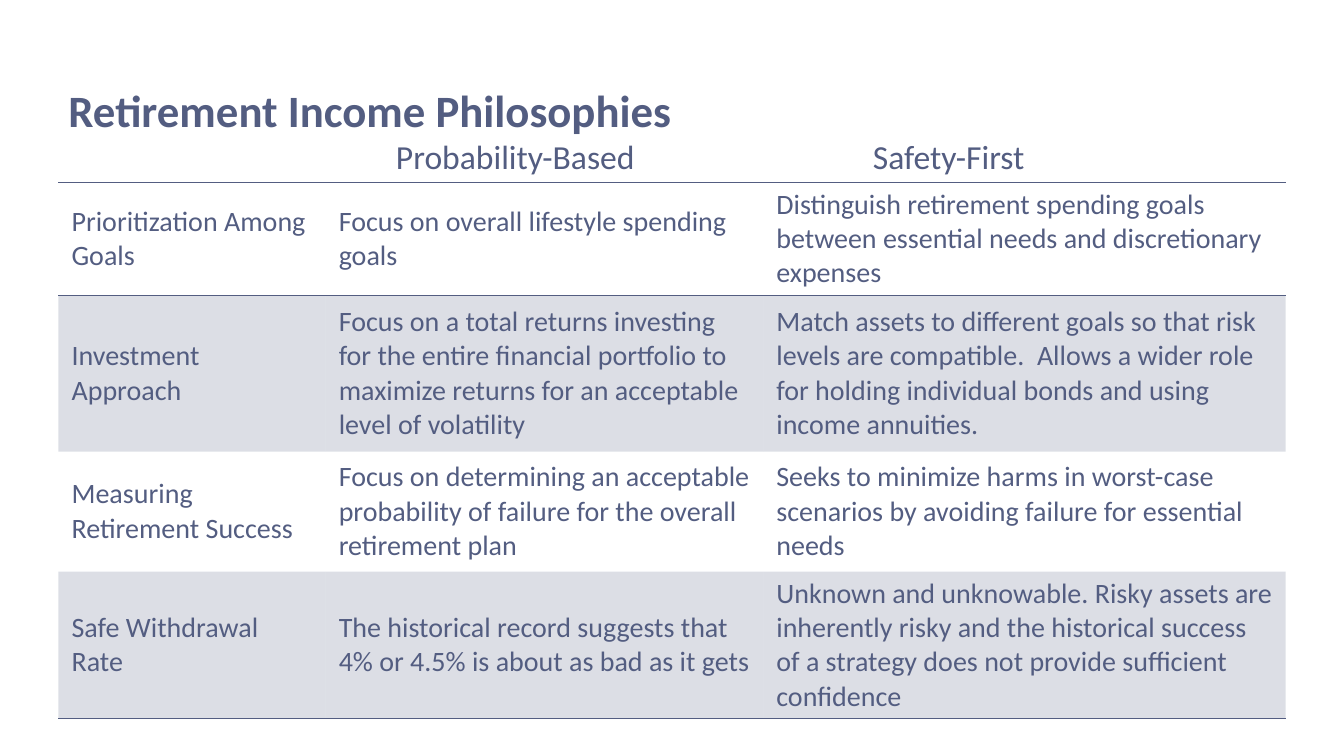
from dataclasses import dataclass

from lxml.etree import SubElement
from pptx import Presentation
from pptx.dml.color import RGBColor
from pptx.enum.text import MSO_ANCHOR as Anchor
from pptx.oxml import parse_xml
from pptx.oxml.ns import nsdecls, qn
from pptx.util import Inches, Pt


@dataclass(frozen=True)
class Theme:
    """Colours, font and type sizes of the slide."""
    ink: str = "535D81"
    font: str = "Calibri"
    title: int = 32
    heading: int = 24
    body: int = 20
    band_alpha: int = 20
    rule: int = 1


THEME = Theme()
SLIDE_W, SLIDE_H = Inches(13.33), Inches(7.5)
LEFT, WIDTH = 4.35, 91.3
COLUMNS = (19.88, 32.56, 38.86)
NO_STYLE = "{2D5ABB26-0587-4C30-8999-92F81FD0307C}"
PHILOSOPHIES = (
    (14.93, "Prioritization Among Goals",
     "Focus on overall lifestyle spending goals",
     "Distinguish retirement spending goals between essential needs and "
     "discretionary expenses"),
    (20.67, "Investment Approach",
     "Focus on a total returns investing for the entire financial portfolio "
     "to maximize returns for an acceptable level of volatility",
     "Match assets to different goals so that risk levels are compatible.  "
     "Allows a wider role for holding individual bonds and using income "
     "annuities."),
    (15.87, "Measuring Retirement Success",
     "Focus on determining an acceptable probability of failure for the "
     "overall retirement plan",
     "Seeks to minimize harms in worst-case scenarios by avoiding failure for "
     "essential needs"),
    (19.4, "Safe Withdrawal Rate",
     "The historical record suggests that 4% or 4.5% is about as bad as it "
     "gets",
     "Unknown and unknowable. Risky assets are inherently risky and the "
     "historical success of a strategy does not provide sufficient confidence"),
)


def across(share):
    """Turn a percentage of the slide's width into a length."""
    return int(SLIDE_W * share / 100)


def down(share):
    """Turn a percentage of the slide's height into a length."""
    return int(SLIDE_H * share / 100)


def style(p, size, bold=False):
    """Give every run of a paragraph the theme's type."""
    for r in p.runs:
        r.font.name, r.font.size, r.font.bold = THEME.font, Pt(size), bold
        r.font.color.rgb = RGBColor.from_string(THEME.ink)


def add_text(s, text, left, top, width, height, anchor=Anchor.TOP):
    """Add a wrapped text box and return its paragraph."""
    sp = s.shapes.add_textbox(across(left), down(top), across(width), down(height))
    tf = sp.text_frame
    tf.word_wrap, tf.vertical_anchor = True, anchor
    tf.text = text
    return tf.paragraphs[0]


def add_title(s, text):
    """Add the slide title."""
    p = add_text(s, text, LEFT, 9.47, WIDTH, 11.07, Anchor.MIDDLE)
    p.line_spacing = 0.9
    style(p, THEME.title, bold=True)


def add_headings(s, first, second):
    """Add two column headings parted by a tab stop."""
    p = add_text(s, f"{first}\t{second}", 28.73, 17.33, 65.87, 6.67)
    tabs = SubElement(p._p.get_or_add_pPr(), qn("a:tabLst"))
    SubElement(tabs, qn("a:tab"), pos=str(across(35.48)), algn="l")
    style(p, THEME.heading)


def shade(cell, banded):
    """Fill a banded cell with translucent ink and leave others clear."""
    if not banded:
        cell.fill.background()
        return
    cell.fill.solid()
    cell.fill.fore_color.rgb = RGBColor.from_string(THEME.ink)
    color = next(cell._tc.tcPr.iter(qn("a:srgbClr")))
    SubElement(color, qn("a:alpha"), val=str(THEME.band_alpha * 1000))


def rule(cell, sides):
    """Draw ink borders on the named sides of a cell."""
    for i, side in enumerate(sides):
        cell._tc.get_or_add_tcPr().insert(i, parse_xml(
            f'<a:ln{side} {nsdecls("a")} w="{Pt(THEME.rule)}"><a:solidFill>'
            f'<a:srgbClr val="{THEME.ink}"/></a:solidFill></a:ln{side}>'))


def fill_cell(cell, text, banded, sides):
    """Write and format one table cell."""
    cell.text = text
    cell.vertical_anchor = Anchor.MIDDLE
    cell.margin_left = cell.margin_right = Inches(0.13)
    cell.margin_top = cell.margin_bottom = Inches(0.05)
    style(cell.text_frame.paragraphs[0], THEME.body)
    shade(cell, banded)
    rule(cell, sides)


def add_comparison(s, rows):
    """Add the table comparing the two philosophies."""
    height = sum(share for share, *_ in rows)
    frame = s.shapes.add_table(len(rows), len(COLUMNS), across(LEFT),
                               down(24.13), across(WIDTH), down(height))
    table = frame.table
    table.first_row = table.horz_banding = False
    table._tbl.tblPr.find(qn("a:tableStyleId")).text = NO_STYLE
    for column, share in zip(table.columns, COLUMNS):
        column.width = across(share)
    borders = {0: "TB", len(rows) - 1: "B"}
    for i, (share, *texts) in enumerate(rows):
        table.rows[i].height = down(share)
        for cell, text in zip(table.rows[i].cells, texts):
            fill_cell(cell, text, i % 2 == 1, borders.get(i, ""))


def main():
    """Build and save the slide."""
    prs = Presentation()
    prs.slide_width, prs.slide_height = SLIDE_W, SLIDE_H
    s = prs.slides.add_slide(prs.slide_layouts[6])
    add_title(s, "Retirement Income Philosophies")
    add_comparison(s, PHILOSOPHIES)
    add_headings(s, "Probability-Based", "Safety-First")
    prs.save("out.pptx")


if __name__ == "__main__":
    main()
